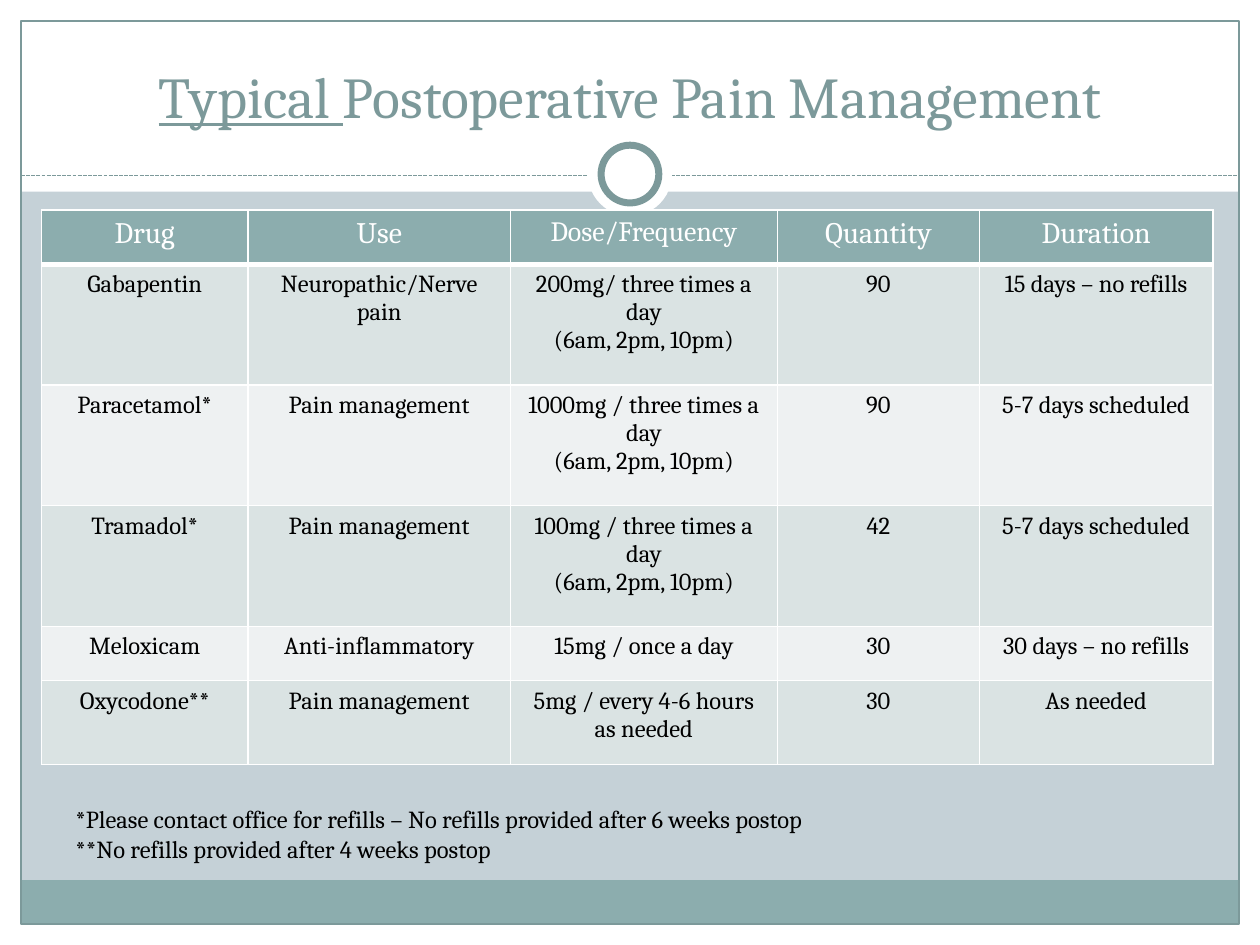
import pptx
import pptx.dml.color
import pptx.enum.dml
import pptx.enum.shapes
import pptx.enum.text
import pptx.oxml.ns
import pptx.util
from lxml import etree

Pt = pptx.util.Pt
SHAPE = pptx.enum.shapes.MSO_SHAPE
ALIGN = pptx.enum.text.PP_ALIGN
FIT = pptx.enum.text.MSO_AUTO_SIZE
qn = pptx.oxml.ns.qn

FONT = "Cambria"
WHITE, BLACK = "FFFFFF", "000000"
SLATE, TEAL, BACKDROP = "7C999A", "8CADAE", "C5D1D7"
BANDS = ("DAE3E3", "EEF1F2")

COLUMN_WIDTHS = (118, 150, 152.5, 115.5, 133.5)
ROW_HEIGHTS = (31, 69, 69, 69, 31, 48)
HEADINGS = ("Drug", "Use", "Dose/Frequency", "Quantity", "Duration")
DRUGS = (
    ("Gabapentin", "Neuropathic/Nerve pain",
     "200mg/ three times a day\n(6am, 2pm, 10pm)", "90", "15 days – no refills"),
    ("Paracetamol*", "Pain management",
     "1000mg / three times a day\n(6am, 2pm, 10pm)", "90", "5-7 days scheduled"),
    ("Tramadol*", "Pain management",
     "100mg / three times a day\n(6am, 2pm, 10pm)", "42", "5-7 days scheduled"),
    ("Meloxicam", "Anti-inflammatory", "15mg / once a day", "30",
     "30 days – no refills"),
    ("Oxycodone**", "Pain management", "5mg / every 4-6 hours as needed", "30",
     "As needed"),
)
FOOTNOTES = (
    "*Please contact office for refills – No refills provided after 6 weeks postop\n"
    "**No refills provided after 4 weeks postop"
)


def rgb(code):
    """Turn a hex string into a colour."""
    return pptx.dml.color.RGBColor.from_string(code)


def paint(fill, code):
    """Make a fill solid in the given colour."""
    fill.solid()
    fill.fore_color.rgb = rgb(code)


def write(frame, text, size=14, color=BLACK, align=ALIGN.LEFT, underlined=""):
    """Write one paragraph per line, with an optional underlined opening."""
    for index, line in enumerate(text.split("\n")):
        paragraph = frame.paragraphs[0] if index == 0 else frame.add_paragraph()
        paragraph.alignment = align
        for part, underline in ((underlined, True), (line, False)):
            if part:
                run = paragraph.add_run()
                run.text = part
                run.font.name = FONT
                run.font.size = Pt(size)
                run.font.color.rgb = rgb(color)
                run.font.underline = underline


def add_panel(slide, kind, box, fill=None, line=None, weight=0.75):
    """Add a preset shape with an optional fill and outline."""
    panel = slide.shapes.add_shape(kind, *map(Pt, box))
    panel.shadow.inherit = False
    if fill:
        paint(panel.fill, fill)
    else:
        panel.fill.background()
    if line:
        panel.line.color.rgb = rgb(line)
        panel.line.width = Pt(weight)
    else:
        panel.line.fill.background()


def add_divider(slide, left, right, y):
    """Add the dashed line beneath the title."""
    divider = slide.shapes.add_connector(
        pptx.enum.shapes.MSO_CONNECTOR.STRAIGHT, Pt(left), Pt(y), Pt(right), Pt(y))
    divider.line.color.rgb = rgb(SLATE)
    divider.line.width = Pt(0.75)
    divider.line.dash_style = pptx.enum.dml.MSO_LINE.SQUARE_DOT
    etree.SubElement(divider._element.spPr, qn("a:effectLst"))


def add_frame(slide):
    """Draw the margins, footer band, border and ring."""
    margins = ((0, 528, 720, 12), (0, 0, 720, 109.5),
               (0, 0, 12, 540), (708, 0, 12, 540))
    for box in margins:
        add_panel(slide, SHAPE.RECTANGLE, box, WHITE)
    add_panel(slide, SHAPE.RECTANGLE, (12, 503, 696, 25), TEAL)
    add_panel(slide, SHAPE.RECTANGLE, (12, 12, 696, 516), line=SLATE)
    add_divider(slide, 12, 708, 100.5)
    add_panel(slide, SHAPE.OVAL, (336, 75.5, 48, 48), WHITE)
    add_panel(slide, SHAPE.OVAL, (343.5, 83, 33, 33), WHITE, SLATE, 4)


def add_title(slide):
    """Fill the title placeholder and bring it above the frame."""
    title = slide.shapes.title
    title.left, title.top, title.width, title.height = map(Pt, (24, 18, 672, 60))
    title.text_frame.vertical_anchor = pptx.enum.text.MSO_ANCHOR.BOTTOM
    title.text_frame.auto_size = FIT.NONE
    write(title.text_frame, "Postoperative Pain Management", size=33, color=SLATE,
          align=ALIGN.CENTER, underlined="Typical ")
    slide.shapes._spTree.append(title._element)


def set_borders(cell, bottom):
    """Give a cell white borders with its own bottom weight."""
    properties = cell._tc.get_or_add_tcPr()
    for side, weight in (("L", 1), ("R", 1), ("T", 1), ("B", bottom)):
        border = etree.SubElement(properties, qn(f"a:ln{side}"), w=str(Pt(weight)))
        solid = etree.SubElement(border, qn("a:solidFill"))
        etree.SubElement(solid, qn("a:srgbClr"), val=WHITE)


def fill_cell(cell, text, fill, bottom=1, **style):
    """Write a centred cell with its fill and borders."""
    set_borders(cell, bottom)
    paint(cell.fill, fill)
    write(cell.text_frame, text, align=ALIGN.CENTER, **style)


def add_drug_table(slide):
    """Add the table of drugs and doses."""
    drug_table = slide.shapes.add_table(
        len(ROW_HEIGHTS), len(COLUMN_WIDTHS), Pt(23.75), Pt(120),
        Pt(sum(COLUMN_WIDTHS)), Pt(sum(ROW_HEIGHTS))).table
    for column, width in zip(drug_table.columns, COLUMN_WIDTHS):
        column.width = Pt(width)
    for row, height in zip(drug_table.rows, ROW_HEIGHTS):
        row.height = Pt(height)
    for index, heading in enumerate(HEADINGS):
        fill_cell(drug_table.cell(0, index), heading, TEAL, bottom=3, color=WHITE,
                  size=16 if heading == "Dose/Frequency" else 17)
    for number, drug in enumerate(DRUGS):
        for index, entry in enumerate(drug):
            fill_cell(drug_table.cell(number + 1, index), entry, BANDS[number % 2])


def add_footnotes(slide):
    """Add the refill notes beneath the table."""
    footnotes = slide.shapes.add_textbox(*map(Pt, (36, 456, 648, 41))).text_frame
    footnotes.word_wrap = True
    footnotes.auto_size = FIT.SHAPE_TO_FIT_TEXT
    write(footnotes, FOOTNOTES)


def main():
    """Build and save the slide."""
    deck = pptx.Presentation()
    deck.slide_width, deck.slide_height = Pt(720), Pt(540)
    slide = deck.slides.add_slide(deck.slide_layouts.get_by_name("Title Only"))
    paint(slide.background.fill, BACKDROP)
    add_frame(slide)
    add_title(slide)
    add_drug_table(slide)
    add_footnotes(slide)
    deck.save("out.pptx")


if __name__ == "__main__":
    main()
